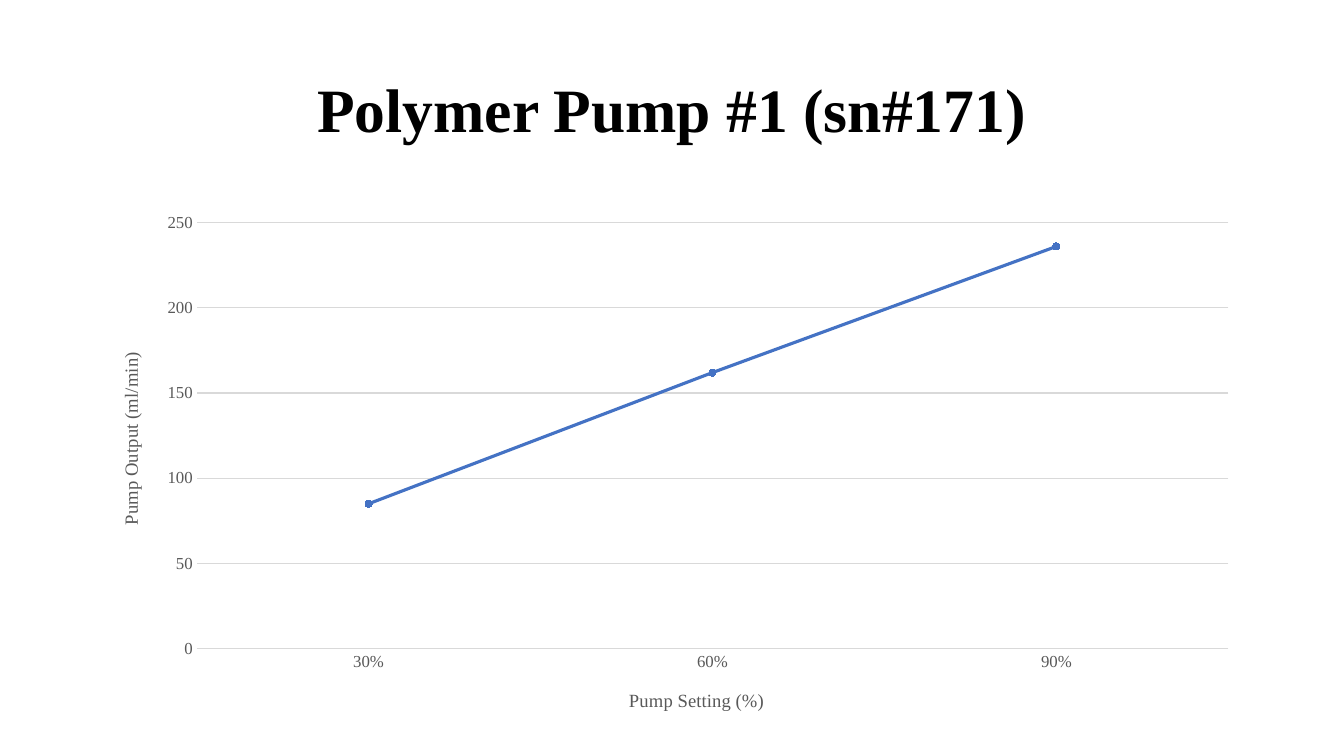
from lxml.etree import SubElement
from pptx import Presentation
from pptx.chart.data import CategoryChartData as Data
from pptx.dml.color import RGBColor
from pptx.enum.chart import XL_CHART_TYPE as Kind, XL_MARKER_STYLE as Mark, XL_TICK_MARK as Tick
from pptx.enum.text import MSO_ANCHOR as Anchor, PP_ALIGN as Align
from pptx.oxml.ns import qn
from pptx.util import Pt

PX = 9525
BLACK = RGBColor(0x00, 0x00, 0x00)
GREY = RGBColor(0x59, 0x59, 0x59)
RULE = RGBColor(0xD9, 0xD9, 0xD9)
BLUE = RGBColor(0x44, 0x72, 0xC4)
FACE = "Times New Roman"


def style(font, size, color, bold=False):
    font.name, font.size, font.bold = FACE, Pt(size), bold
    font.color.rgb = color


def write(frame, text, size=12, color=BLACK, bold=False, align=Align.CENTER, spacing=None):
    par = frame.paragraphs[0]
    par.alignment, par.line_spacing = align, spacing
    run = par.add_run()
    run.text = text
    style(run.font, size, color, bold)


def place(node, index, **parts):
    """Give a chart part a manual layout, in fractions of the chart."""
    old = node.find(qn("c:layout"))
    if old is not None:
        node.remove(old)
    layout = SubElement(node, qn("c:layout"))
    node.insert(index, layout)
    manual = SubElement(layout, qn("c:manualLayout"))
    if "w" in parts:
        SubElement(manual, qn("c:layoutTarget")).set("val", "inner")
    for mode in ("xMode", "yMode"):
        SubElement(manual, qn(f"c:{mode}")).set("val", "edge")
    for key, val in parts.items():
        SubElement(manual, qn(f"c:{key}")).set("val", str(val))


def set_axis(axis, name, x, y):
    axis.major_tick_mark = axis.minor_tick_mark = Tick.NONE
    style(axis.tick_labels.font, 12, GREY)
    title = axis.axis_title
    write(title.text_frame, name, size=13.3, color=GREY)
    place(title._element, 1, x=x, y=y)


def add_title(slide, left, top, width, height):
    box = slide.shapes.add_textbox(left * PX, top * PX, width * PX, height * PX)
    frame = box.text_frame
    frame.word_wrap = True
    frame.vertical_anchor = Anchor.MIDDLE
    write(frame, "Polymer Pump #1 (sn#171)", size=44, bold=True, spacing=0.9)


def add_plot(slide, left, top, width, height):
    data = Data()
    data.categories = [0.3, 0.6, 0.9]
    data.categories.number_format = "0%"
    data.add_series("Series 1", [85, 162, 236])
    chart = slide.shapes.add_chart(Kind.LINE_MARKERS_STACKED, left * PX, top * PX,
                                   width * PX, height * PX, data).chart
    chart.has_legend = chart.has_title = False
    chart.font.name, chart.font.size = "Calibri", Pt(10)
    chart.plots[0].vary_by_categories = False
    place(chart._chartSpace.chart.plotArea, 0, x=0.09, y=0.04, w=0.89, h=0.81)

    cats, vals = chart.category_axis, chart.value_axis
    set_axis(cats, "Pump Setting (%)", 0.46, 0.92)
    set_axis(vals, "Pump Output (ml/min)", 0.02, 0.28)
    cats.tick_labels.number_format = "0%"
    cats.tick_labels.number_format_is_linked = False
    vals.minimum_scale, vals.maximum_scale, vals.major_unit = 0, 250, 50
    vals.format.line.fill.background()
    for line in (cats.format.line, vals.major_gridlines.format.line):
        line.color.rgb, line.width = RULE, Pt(0.75)

    series = chart.plots[0].series[0]
    series.smooth = False
    series.format.line.color.rgb, series.format.line.width = BLUE, Pt(2.25)
    mark = series.marker
    mark.style, mark.size = Mark.CIRCLE, 5
    mark.format.fill.solid()
    mark.format.fill.fore_color.rgb = mark.format.line.color.rgb = BLUE


def main():
    deck = Presentation()
    deck.slide_width, deck.slide_height = 1280 * PX, 720 * PX
    slide = deck.slides.add_slide(deck.slide_layouts[6])
    add_title(slide, 88, 38, 1104, 139)
    add_plot(slide, 88, 192, 1104, 501)
    deck.save("out.pptx")


if __name__ == "__main__":
    main()
